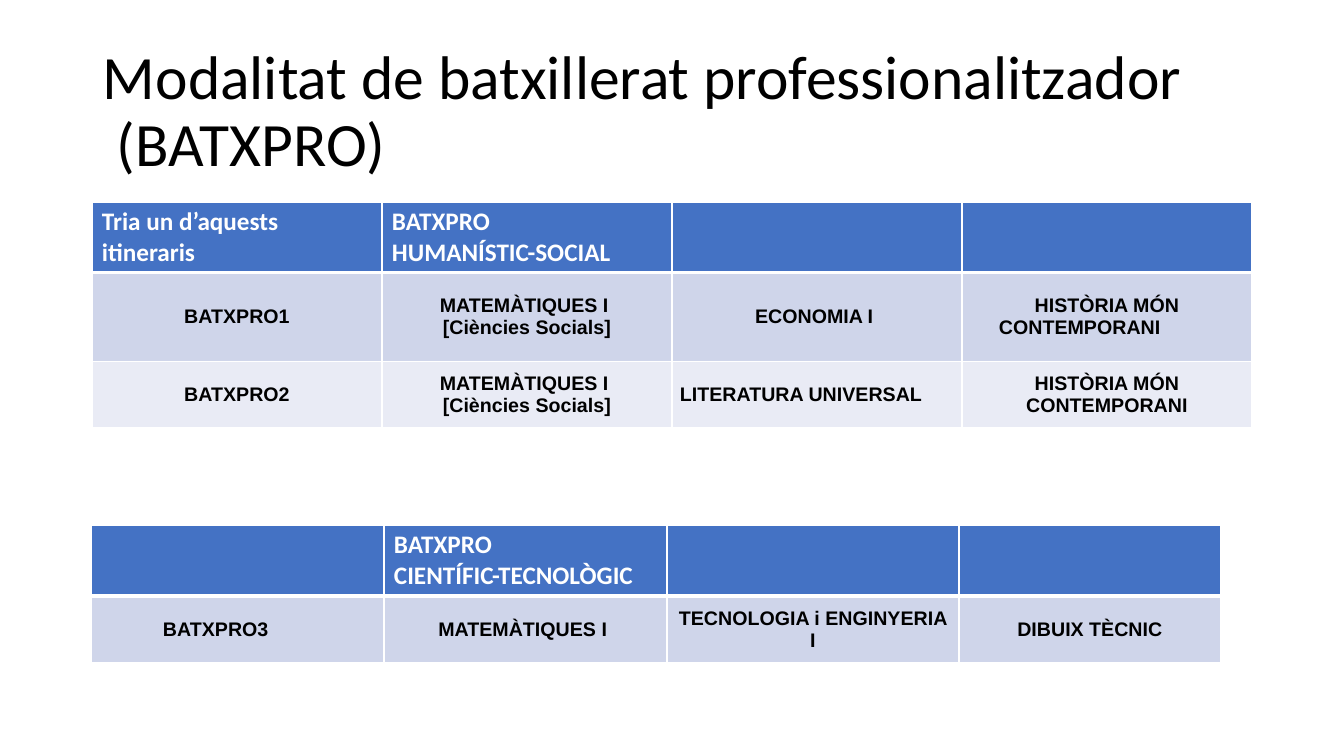
from lxml import etree
from pptx import Presentation
from pptx.dml.color import RGBColor
from pptx.enum.text import MSO_ANCHOR, PP_ALIGN
from pptx.oxml.ns import qn
from pptx.util import Pt

SCALE = 914400 / 100.8
LEFT, CENTER = PP_ALIGN.LEFT, PP_ALIGN.CENTER
TOP, MIDDLE = MSO_ANCHOR.TOP, MSO_ANCHOR.MIDDLE

TITLE = {"name": "Calibri", "size": Pt(44), "bold": False}
HEAD = {"name": "Calibri", "size": Pt(18), "bold": True}
BODY = {"name": "Arial", "size": Pt(14), "bold": True}
BLACK, WHITE, BLUE = "000000", "FFFFFF", "4472C4"
BANDS = ["CFD5EA", "E9EBF5"]

# A plain line is centred; a (text, indent) pair is set from the left.
MATHS = ["MATEMÀTIQUES I ", "[Ciències Socials]"]
SOCIAL = [
    [[("Tria un d’aquests itineraris", 0)],
     [("BATXPRO", 0), ("HUMANÍSTIC-SOCIAL", 0)], [], []],
    [["BATXPRO1"], MATHS, ["ECONOMIA I "],
     ["HISTÒRIA MÓN", ("CONTEMPORANI", 29)]],
    [["BATXPRO2"], MATHS, [("LITERATURA UNIVERSAL", 0)],
     ["HISTÒRIA MÓN CONTEMPORANI"]],
]
SCIENCE = [
    [[], [("BATXPRO", 0), ("CIENTÍFIC-TECNOLÒGIC", 0)], [], []],
    [[("BATXPRO3", 65)], ["MATEMÀTIQUES I "],
     ["TECNOLOGIA i ENGINYERIA I"], ["DIBUIX TÈCNIC"]],
]


def px(num):
    return round(num * SCALE)


def color(code):
    return RGBColor.from_string(code)


def assign(item, values):
    for key, value in values.items():
        setattr(item, key, value)


def write(frame, lines, style, ink, space=1.0):
    for i, line in enumerate(lines):
        para = frame.add_paragraph() if i else frame.paragraphs[0]
        text, indent = (line, None) if isinstance(line, str) else line
        para.line_spacing = space
        para.alignment = CENTER if indent is None else LEFT
        if indent:
            para._p.get_or_add_pPr().set("marL", str(px(indent)))
        run = para.add_run()
        run.text = text
        assign(run.font, style)
        run.font.color.rgb = color(ink)


def border(cell, widths):
    """Draw white lines on the left, right, top and bottom, in points."""
    props = cell._tc.get_or_add_tcPr()
    for side, width in zip("LRTB", widths):
        line = etree.SubElement(props, qn(f"a:ln{side}"), w=str(Pt(width)))
        fill = etree.SubElement(line, qn("a:solidFill"))
        etree.SubElement(fill, qn("a:srgbClr"), val=WHITE)


def heading(slide, box):
    frame = slide.shapes.add_textbox(*map(px, box)).text_frame
    assign(frame, {"word_wrap": True, "vertical_anchor": MIDDLE})
    lines = [("Modalitat de batxillerat professionalitzador", 0),
             ("(BATXPRO)", 14)]
    write(frame, lines, TITLE, BLACK, 0.9)


def grid(slide, left, top, widths, heights, rows, pad):
    """Place a course table with a blue header and banded rows."""
    box = left, top, sum(widths), sum(heights)
    table = slide.shapes.add_table(
        len(rows), len(widths), *map(px, box)).table
    for col, width in zip(table.columns, widths):
        col.width = px(width)
    for r, (row, height) in enumerate(zip(rows, heights)):
        table.rows[r].height = px(height)
        head = r == 0
        side, edge = (px(10), px(5)) if head else (px(pad), 0)
        layout = {"margin_left": side, "margin_right": side,
                  "margin_top": edge, "margin_bottom": edge,
                  "vertical_anchor": TOP if head else MIDDLE}
        for c, lines in enumerate(row):
            cell = table.cell(r, c)
            border(cell, (1, 1, 3 if r == 1 else 1, 3 if head else 1))
            cell.fill.solid()
            cell.fill.fore_color.rgb = color(
                BLUE if head else BANDS[(r - 1) % 2])
            assign(cell, layout)
            write(cell.text_frame, lines, HEAD if head else BODY,
                  WHITE if head else BLACK)


def main():
    deck = Presentation()
    assign(deck, {"slide_width": px(1344), "slide_height": px(756)})
    slide = deck.slides.add_slide(deck.slide_layouts[6])
    heading(slide, (93, 40, 1159, 146))
    grid(slide, 92, 202, [290] * 4, [70, 89, 66], SOCIAL, 8)
    grid(slide, 91, 525, [293, 283, 292, 262], [71, 67], SCIENCE, 7)
    deck.save("out.pptx")


if __name__ == "__main__":
    main()
